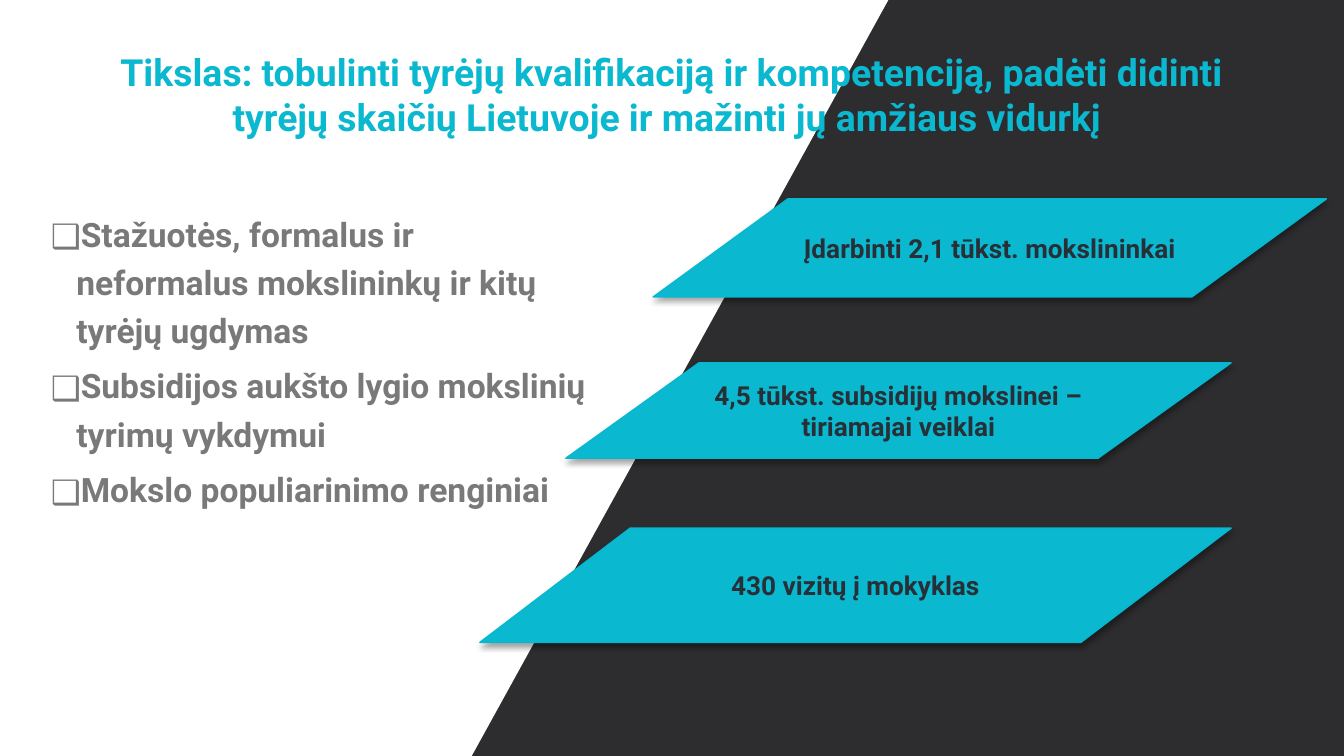
from pptx import Presentation
from pptx.dml.color import RGBColor
from pptx.enum.shapes import MSO_SHAPE
from pptx.enum.text import MSO_ANCHOR, PP_ALIGN
from pptx.oxml import parse_xml
from pptx.oxml.ns import nsdecls
from pptx.util import Inches, Pt

FONT, BULLET_FONT = "Roboto", "Noto Sans Symbols"
WHITE, DARK, CYAN, EDGE = "FFFFFF", "2D2C2E", "0AB8D0", "05B8D0"
INK, GREY = "272F37", "797979"
TITLE = ("Tikslas: tobulinti tyrėjų kvalifikaciją ir kompetenciją, padėti didinti "
         "tyrėjų skaičių Lietuvoje ir mažinti jų amžiaus vidurkį ")
MEASURES = [
    "Stažuotės, formalus ir neformalus mokslininkų ir kitų tyrėjų ugdymas",
    "Subsidijos aukšto lygio mokslinių tyrimų vykdymui",
    "Mokslo populiarinimo renginiai",
]
RESULTS = [
    ("4,5 tūkst. subsidijų mokslinei – tiriamajai veiklai", (4.21, 2.7, 4.95, 0.71)),
    ("Įdarbinti 2,1 tūkst. mokslininkai ", (4.86, 1.48, 5.01, 0.73)),
    ("430 vizitų į mokyklas", (3.57, 3.93, 5.59, 0.85)),
]


def rgb(value):
    """Return the colour for a hex string."""
    return RGBColor.from_string(value)


def add_run(p, text, size, color):
    """Add a bold run to a paragraph."""
    r = p.add_run()
    r.text = text
    r.font.name, r.font.size, r.font.bold = FONT, Pt(size), True
    r.font.color.rgb = rgb(color)


def add_background(s, height):
    """Paint the dark slide and its slanted white left part."""
    s.background.fill.solid()
    s.background.fill.fore_color.rgb = rgb(DARK)
    fb = s.shapes.build_freeform(0, 0, scale=1.0)
    fb.add_line_segments([(Inches(6.61), 0), (Inches(3.51), height), (0, height)])
    sp = fb.convert_to_shape()
    sp.shadow.inherit = False
    sp.fill.solid()
    sp.fill.fore_color.rgb = rgb(WHITE)
    sp.line.fill.background()


def add_title(s, box, text):
    """Add the centred heading."""
    tf = s.shapes.add_textbox(*map(Inches, box)).text_frame
    tf.word_wrap = True
    tf.vertical_anchor = MSO_ANCHOR.MIDDLE
    tf.margin_left = tf.margin_right = Inches(0.07)
    tf.margin_top = tf.margin_bottom = Inches(0.04)
    p = tf.paragraphs[0]
    p.alignment = PP_ALIGN.CENTER
    add_run(p, text, 20, CYAN)


def add_measures(s, box, items):
    """Add the list with square bullets."""
    tf = s.shapes.add_textbox(*map(Inches, box)).text_frame
    tf.word_wrap = True
    for i, item in enumerate(items):
        p = tf.add_paragraph() if i else tf.paragraphs[0]
        p.line_spacing = 1.2
        p.space_before = Pt(3.6)
        pPr = p._p.get_or_add_pPr()
        pPr.set("marL", str(Inches(0.19)))
        pPr.set("indent", str(-Inches(0.19)))
        pPr.append(parse_xml(f'<a:buFont {nsdecls("a")} typeface="{BULLET_FONT}"/>'))
        pPr.append(parse_xml(f'<a:buChar {nsdecls("a")} char="❑"/>'))
        add_run(p, item, 18, GREY)


def add_result(s, box, text):
    """Add a slanted box with a soft shadow."""
    sp = s.shapes.add_shape(MSO_SHAPE.FLOWCHART_DATA, *map(Inches, box))
    sp.fill.solid()
    sp.fill.fore_color.rgb = rgb(CYAN)
    sp.line.color.rgb = rgb(EDGE)
    sp.line.width = Pt(0.75)
    sp._element.spPr.append(parse_xml(
        f'<a:effectLst {nsdecls("a")}><a:outerShdw blurRad="{Pt(3.1)}" '
        f'dist="{Pt(1.8)}" dir="5400000" rotWithShape="0">'
        '<a:srgbClr val="000000"><a:alpha val="35000"/></a:srgbClr>'
        '</a:outerShdw></a:effectLst>'))
    tf = sp.text_frame
    tf.word_wrap = True
    tf.vertical_anchor = MSO_ANCHOR.MIDDLE
    p = tf.paragraphs[0]
    p.alignment = PP_ALIGN.CENTER
    add_run(p, text, 14, INK)


def main():
    """Build and save the slide."""
    prs = Presentation()
    prs.slide_width = Inches(10)
    prs.slide_height = prs.slide_width * 9 // 16
    s = prs.slides.add_slide(prs.slide_layouts[6])
    add_background(s, prs.slide_height)
    add_title(s, (0.5, 0.23, 9, 0.94), TITLE)
    for text, box in RESULTS:
        add_result(s, box, text)
    add_measures(s, (0.28, 1.48, 4.19, 3.3), MEASURES)
    prs.save("out.pptx")


if __name__ == "__main__":
    main()
